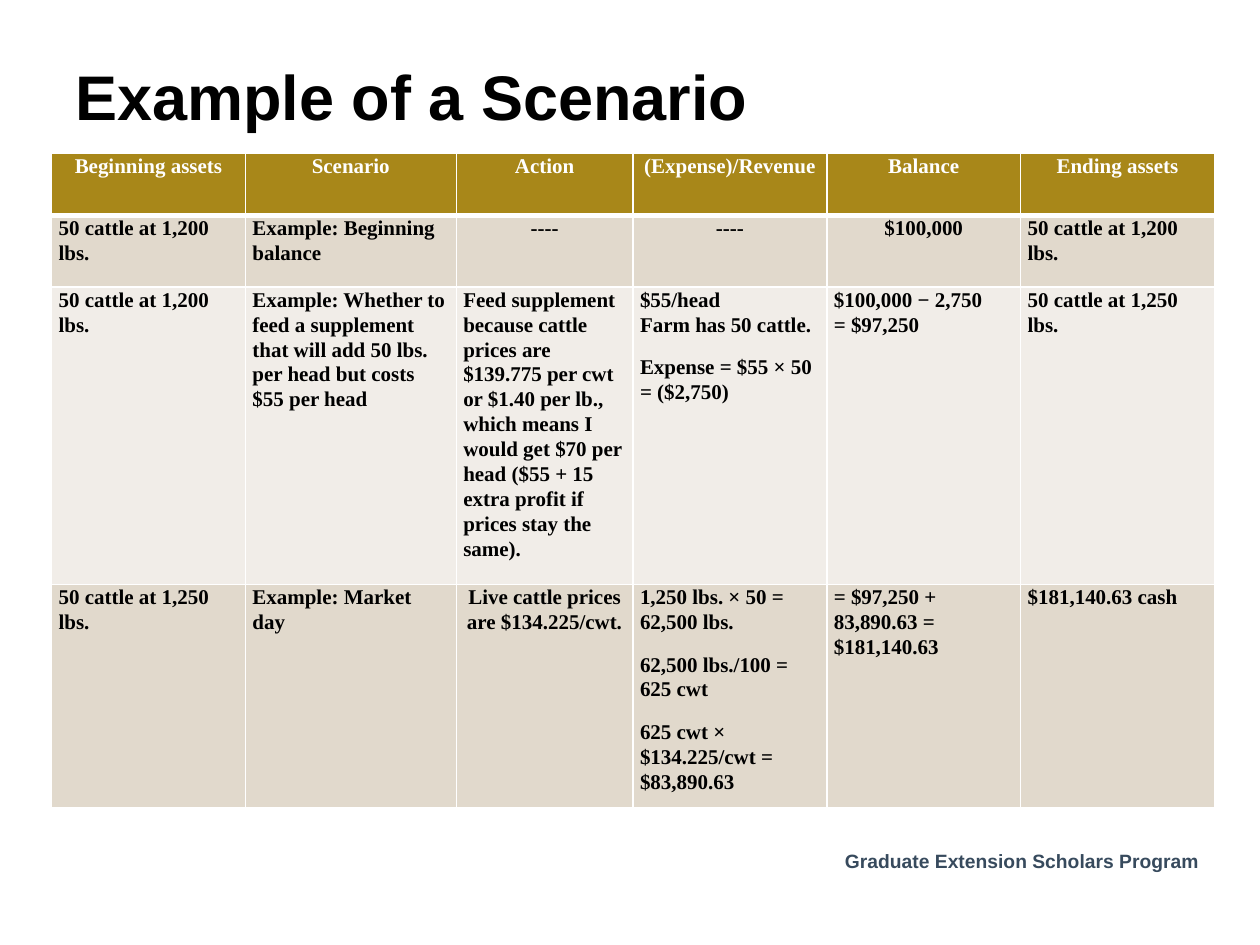
from dataclasses import dataclass

from lxml import etree
from pptx import Presentation
from pptx import util as u
from pptx.dml.color import RGBColor
from pptx.enum import text
from pptx.oxml import ns


@dataclass(frozen=True)
class Theme:
    heading_font: str = "Arial"
    table_font: str = "Times New Roman"
    title_size: float = 36
    footer_size: float = 11
    table_size: float = 12
    black: str = "000000"
    white: str = "FFFFFF"
    slate: str = "374A5D"
    gold: str = "A88719"
    bands: tuple = ("E1D9CC", "F1EDE8")


THEME = Theme()
LINE_SPACING = 1.07
GAP = 10  # space before a new step inside a cell
COLUMN_WIDTHS = [110.75, 120.5, 101, 110.75, 110.75, 110.75]
ROW_HEIGHTS = [35.25, 41, 170, 118]

HEADERS = ["Beginning assets", "Scenario", "Action", "(Expense)/Revenue",
           "Balance", "Ending assets"]

# Each cell lists its steps; a line break within a step starts a new paragraph
ROWS = [
    [["50 cattle at 1,200 lbs."],
     ["Example: Beginning balance"],
     ["----"],
     ["----"],
     ["$100,000"],
     ["50 cattle at 1,200 lbs."]],
    [["50 cattle at 1,200 lbs."],
     ["Example: Whether to feed a supplement that will add 50 lbs. per head "
      "but costs $55 per head"],
     ["Feed supplement because cattle prices are $139.775 per cwt or $1.40 "
      "per lb., which means I would get $70 per head ($55 + 15 extra profit "
      "if prices stay the same)."],
     ["$55/head\nFarm has 50 cattle.", "Expense = $55 × 50 = ($2,750)"],
     ["$100,000 − 2,750\n= $97,250"],
     ["50 cattle at 1,250 lbs."]],
    [["50 cattle at 1,250 lbs."],
     ["Example: Market day"],
     ["Live cattle prices are $134.225/cwt."],
     ["1,250 lbs. × 50 = 62,500 lbs.", "62,500 lbs./100 = 625 cwt",
      "625 cwt × $134.225/cwt = $83,890.63"],
     ["= $97,250 + 83,890.63 = $181,140.63"],
     ["$181,140.63 cash"]],
]
CENTERED = {(1, 2), (1, 3), (1, 4), (3, 2)}


def add_run(p, words, font, size, color):
    r = p.add_run()
    r.text = words
    r.font.name = font
    r.font.size = u.Pt(size)
    r.font.bold = True
    r.font.color.rgb = RGBColor.from_string(color)


def add_label(s, box, words, size, color, anchor):
    sp = s.shapes.add_textbox(*(u.Pt(v) for v in box))
    tf = sp.text_frame
    tf.word_wrap = True
    tf.vertical_anchor = anchor
    add_run(tf.paragraphs[0], words, THEME.heading_font, size, color)


def set_borders(cell, top, bottom):
    tc_pr = cell._tc.get_or_add_tcPr()
    for side, width in (("L", 1), ("R", 1), ("T", top), ("B", bottom)):
        ln = etree.SubElement(tc_pr, ns.qn(f"a:ln{side}"), w=str(u.Pt(width)))
        fill = etree.SubElement(ln, ns.qn("a:solidFill"))
        etree.SubElement(fill, ns.qn("a:srgbClr"), val=THEME.white)


def fill_cell(cell, steps, color, fill, centered, top=1, bottom=1):
    set_borders(cell, top, bottom)
    cell.fill.solid()
    cell.fill.fore_color.rgb = RGBColor.from_string(fill)
    cell.margin_left = cell.margin_right = u.Pt(4)
    cell.margin_top = cell.margin_bottom = 0
    tf = cell.text_frame
    p = tf.paragraphs[0]
    for i, step in enumerate(steps):
        for j, line in enumerate(step.split("\n")):
            if i or j:
                p = tf.add_paragraph()
            p.line_spacing = LINE_SPACING
            p.space_before = u.Pt(GAP if i and not j else 0)
            p.alignment = (text.PP_ALIGN.CENTER if centered
                           else text.PP_ALIGN.LEFT)
            add_run(p, line, THEME.table_font, THEME.table_size, color)


def add_scenario_table(s, left, top):
    frame = s.shapes.add_table(
        len(ROW_HEIGHTS), len(COLUMN_WIDTHS), u.Pt(left), u.Pt(top),
        u.Pt(sum(COLUMN_WIDTHS)), u.Pt(sum(ROW_HEIGHTS)))
    table = frame.table
    for column, width in zip(table.columns, COLUMN_WIDTHS):
        column.width = u.Pt(width)
    for row, height in zip(table.rows, ROW_HEIGHTS):
        row.height = u.Pt(height)

    # Header row, with a heavier rule below it
    for c, words in enumerate(HEADERS):
        fill_cell(table.cell(0, c), [words], THEME.white, THEME.gold,
                  True, bottom=3)

    # Banded body rows
    for r, row in enumerate(ROWS, start=1):
        for c, steps in enumerate(row):
            fill_cell(table.cell(r, c), steps, THEME.black,
                      THEME.bands[(r - 1) % 2], (r, c) in CENTERED,
                      top=3 if r == 1 else 1)


def main():
    prs = Presentation()
    prs.slide_width, prs.slide_height = u.Pt(720), u.Pt(540)
    s = prs.slides.add_slide(prs.slide_layouts[6])

    # Footer, title and table
    add_label(s, (475.75, 481.5, 220, 21), "Graduate Extension Scholars Program",
              THEME.footer_size, THEME.slate, text.MSO_ANCHOR.TOP)
    add_label(s, (36, 21.6, 648, 66), "Example of a Scenario",
              THEME.title_size, THEME.black, text.MSO_ANCHOR.MIDDLE)
    add_scenario_table(s, 29.5, 87.75)

    prs.save("out.pptx")


if __name__ == "__main__":
    main()
